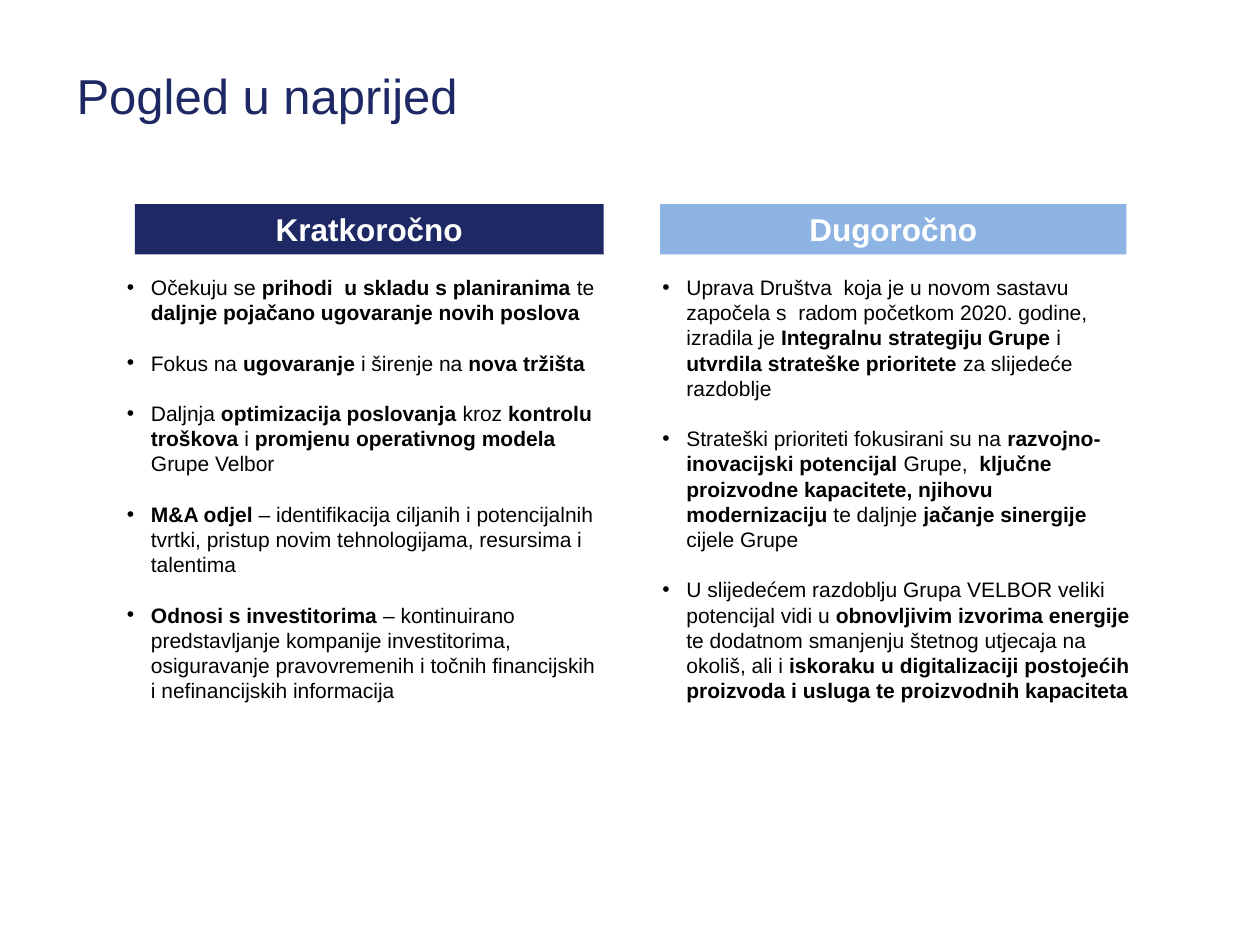
from pptx import Presentation
from pptx.dml.color import RGBColor
from pptx.enum.shapes import MSO_SHAPE as Shape
from pptx.enum.text import MSO_ANCHOR as Anchor, PP_ALIGN as Align
from pptx.oxml.ns import qn
from pptx.util import Inches, Pt
from lxml.etree import SubElement

FONT = "Arial"
COLORS = {"navy": "1E2864", "sky": "8EB4E3", "white": "FFFFFF", "black": "000000"}
TITLE = "Pogled u naprijed"

# Each point alternates regular and bold text, starting with regular.
COLUMNS = [
    {
        "heading": "Kratkoročno", "fill": "navy", "bar": (1.07, 3.72), "left": 0.91,
        "points": [
            ("Očekuju se ", "prihodi  u skladu s planiranima ", "te ",
             "daljnje pojačano ugovaranje novih poslova"),
            ("Fokus na ", "ugovaranje ", "i širenje na ", "nova tržišta"),
            ("Daljnja ", "optimizacija poslovanja ", "kroz ", "kontrolu troškova ",
             "i", " promjenu operativnog modela ", "Grupe Velbor"),
            ("", "M&A odjel ", "– identifikacija ciljanih i potencijalnih tvrtki, "
             "pristup novim tehnologijama, resursima i talentima"),
            ("", "Odnosi s investitorima ", "– kontinuirano predstavljanje kompanije "
             "investitorima, osiguravanje pravovremenih i točnih financijskih "
             "i nefinancijskih informacija"),
        ],
    },
    {
        "heading": "Dugoročno", "fill": "sky", "bar": (5.24, 3.7), "left": 5.16,
        "points": [
            ("Uprava Društva  koja je u novom sastavu započela s  radom početkom "
             "2020. godine, izradila je ", "Integralnu strategiju Grupe ", "i ",
             "utvrdila strateške prioritete ", "za slijedeće razdoblje"),
            ("Strateški prioriteti fokusirani su na ", "razvojno-inovacijski potencijal ",
             "Grupe,  ", "ključne proizvodne kapacitete, njihovu modernizaciju ",
             "te daljnje ", "jačanje sinergije ", "cijele Grupe"),
            ("U slijedećem razdoblju Grupa VELBOR veliki potencijal vidi u ",
             "obnovljivim izvorima energije ",
             "te dodatnom smanjenju štetnog utjecaja na okoliš, ali i ",
             "iskoraku u digitalizaciji postojećih proizvoda i usluga "
             "te proizvodnih kapaciteta"),
        ],
    },
]
BAR_TOP, BAR_HEIGHT = 1.62, 0.4
LIST_TOP, LIST_WIDTH, LIST_HEIGHT = 2.13, 3.94, 3.53
INDENT = Inches(0.19)
LINE = Pt(14.4)


def style(run, size, color, bold=False):
    run.font.name = FONT
    run.font.size = Pt(size)
    run.font.bold = bold
    run.font.color.rgb = RGBColor.from_string(COLORS[color])


def add_text(slide, *box):
    frame = slide.shapes.add_textbox(*map(Inches, box)).text_frame
    frame.word_wrap = True
    return frame


def add_heading(slide, column):
    left, width = column["bar"]
    bar = slide.shapes.add_shape(
        Shape.RECTANGLE, *map(Inches, (left, BAR_TOP, width, BAR_HEIGHT)))
    bar.shadow.inherit = False
    bar.fill.solid()
    bar.fill.fore_color.rgb = RGBColor.from_string(COLORS[column["fill"]])
    bar.line.fill.background()
    bar.text_frame.text = column["heading"]
    heading = bar.text_frame.paragraphs[0]
    heading.alignment = Align.CENTER
    style(heading.runs[0], 18, "white", True)


def add_points(slide, column):
    frame = add_text(slide, column["left"], LIST_TOP, LIST_WIDTH, LIST_HEIGHT)
    for number, pieces in enumerate(column["points"]):
        point = frame.add_paragraph() if number else frame.paragraphs[0]
        props = point._p.get_or_add_pPr()
        props.set("marL", str(INDENT))
        props.set("indent", str(-INDENT))
        point.line_spacing = LINE
        if number:
            point.space_before = LINE
        SubElement(props, qn("a:buFont"), typeface=FONT)
        SubElement(props, qn("a:buChar"), char="•")
        for position, piece in enumerate(pieces):
            if piece:
                run = point.add_run()
                run.text = piece
                style(run, 12, "black", position % 2 == 1)


def main():
    deck = Presentation()
    deck.slide_width, deck.slide_height = Inches(10), Inches(7.5)
    slide = deck.slides.add_slide(deck.slide_layouts[6])
    title = add_text(slide, 0.51, 0.44, 8.82, 0.63)
    title.vertical_anchor = Anchor.MIDDLE
    title.text = TITLE
    style(title.paragraphs[0].runs[0], 28, "navy")
    for column in COLUMNS:
        add_heading(slide, column)
        add_points(slide, column)
    deck.save("out.pptx")


if __name__ == "__main__":
    main()
